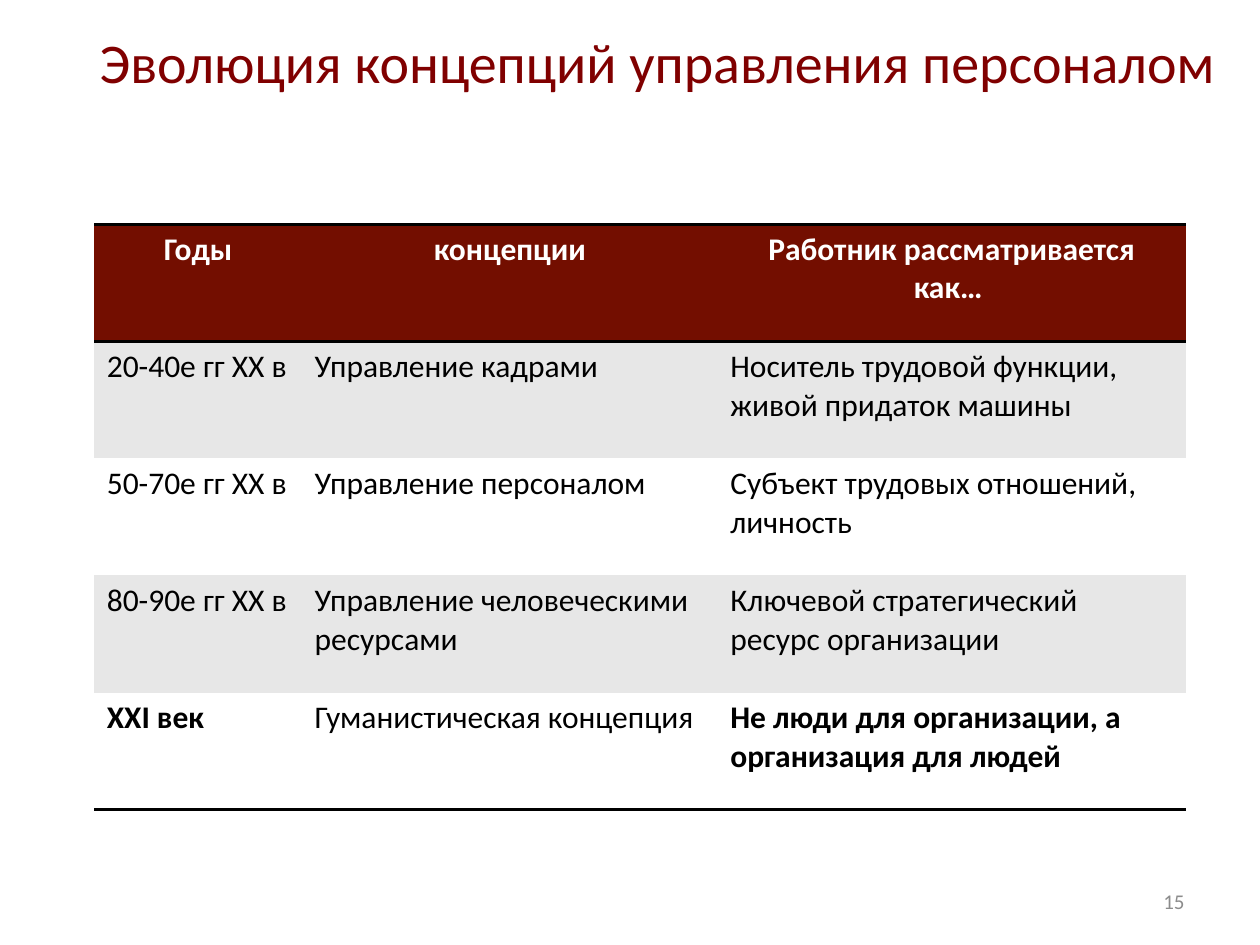
from lxml.etree import fromstring
from pptx import Presentation
from pptx.dml.color import RGBColor
from pptx.enum.text import MSO_ANCHOR, PP_ALIGN
from pptx.oxml.ns import nsdecls
from pptx.util import Cm, Pt

COLORS = {
    "title": "800000",
    "header": "730E00",
    "band": "E7E7E7",
    "white": "FFFFFF",
    "black": "000000",
    "number": "8C8C8C",
}
FONT = "Calibri"
NO_GRID_STYLE = "{2D5ABB26-0587-4C30-8999-92F81FD0307C}"


def format_text(frame, size, color, align, bold=False):
    paragraph = frame.paragraphs[0]
    paragraph.alignment = align
    font = paragraph.runs[0].font
    font.name = FONT
    font.size = Pt(size)
    font.bold = bold
    font.color.rgb = RGBColor.from_string(COLORS[color])


def add_border(cell, side):
    # Border lines come before the fill in the cell properties
    line = fromstring(
        f'<a:ln{side} {nsdecls("a")} w="{Pt(2)}"><a:solidFill>'
        f'<a:srgbClr val="{COLORS["black"]}"/></a:solidFill></a:ln{side}>'
    )
    cell._tc.get_or_add_tcPr().insert(0, line)


presentation = Presentation()
presentation.slide_width = Cm(25.4)
presentation.slide_height = Cm(19.05)
slide = presentation.slides.add_slide(presentation.slide_layouts[5])

# Title
title = slide.shapes.title
title.left, title.top, title.width, title.height = Cm(0.51), Cm(0.53), Cm(24.26), Cm(1.4)
title.text_frame.text = "Эволюция концепций управления персоналом"
title.text_frame.vertical_anchor = MSO_ANCHOR.MIDDLE
format_text(title.text_frame, 32, "title", PP_ALIGN.RIGHT)

# Table of concepts by period
concepts = [
    ("Годы", "концепции", "Работник рассматривается как… "),
    ("20-40е гг ХХ в", "Управление кадрами", "Носитель трудовой функции, живой придаток машины"),
    ("50-70е гг ХХ в", "Управление персоналом", "Субъект трудовых отношений, личность"),
    ("80-90е гг ХХ в", "Управление человеческими ресурсами", "Ключевой стратегический ресурс организации"),
    ("ХХI век", "Гуманистическая концепция", "Не люди для организации, а организация для людей"),
]
column_widths = [4.19, 8.38, 9.43]
last_row = len(concepts) - 1
table = slide.shapes.add_table(
    len(concepts), len(column_widths), Cm(1.9), Cm(4.52), Cm(sum(column_widths)), Cm(11.8)
).table
table._tbl.tblPr.find("{*}tableStyleId").text = NO_GRID_STYLE
for column, width in zip(table.columns, column_widths):
    column.width = Cm(width)

for row, texts in enumerate(concepts):
    is_header = row == 0
    fill = "header" if is_header else "band" if row % 2 else "white"
    for col, text in enumerate(texts):
        cell = table.cell(row, col)
        cell.text_frame.text = text
        format_text(
            cell.text_frame,
            18,
            "white" if is_header else "black",
            PP_ALIGN.CENTER if is_header else PP_ALIGN.LEFT,
            bold=is_header or (row == last_row and col != 1),
        )
        cell.fill.solid()
        cell.fill.fore_color.rgb = RGBColor.from_string(COLORS[fill])
        if row in (0, last_row):
            add_border(cell, "B")
        if is_header:
            add_border(cell, "T")

# Slide number
page_number = slide.shapes.add_textbox(Cm(18.21), Cm(17.65), Cm(5.92), Cm(1.02)).text_frame
page_number.word_wrap = True
page_number.vertical_anchor = MSO_ANCHOR.MIDDLE
page_number.text = "15"
format_text(page_number, 12, "number", PP_ALIGN.RIGHT)

presentation.save("out.pptx")
